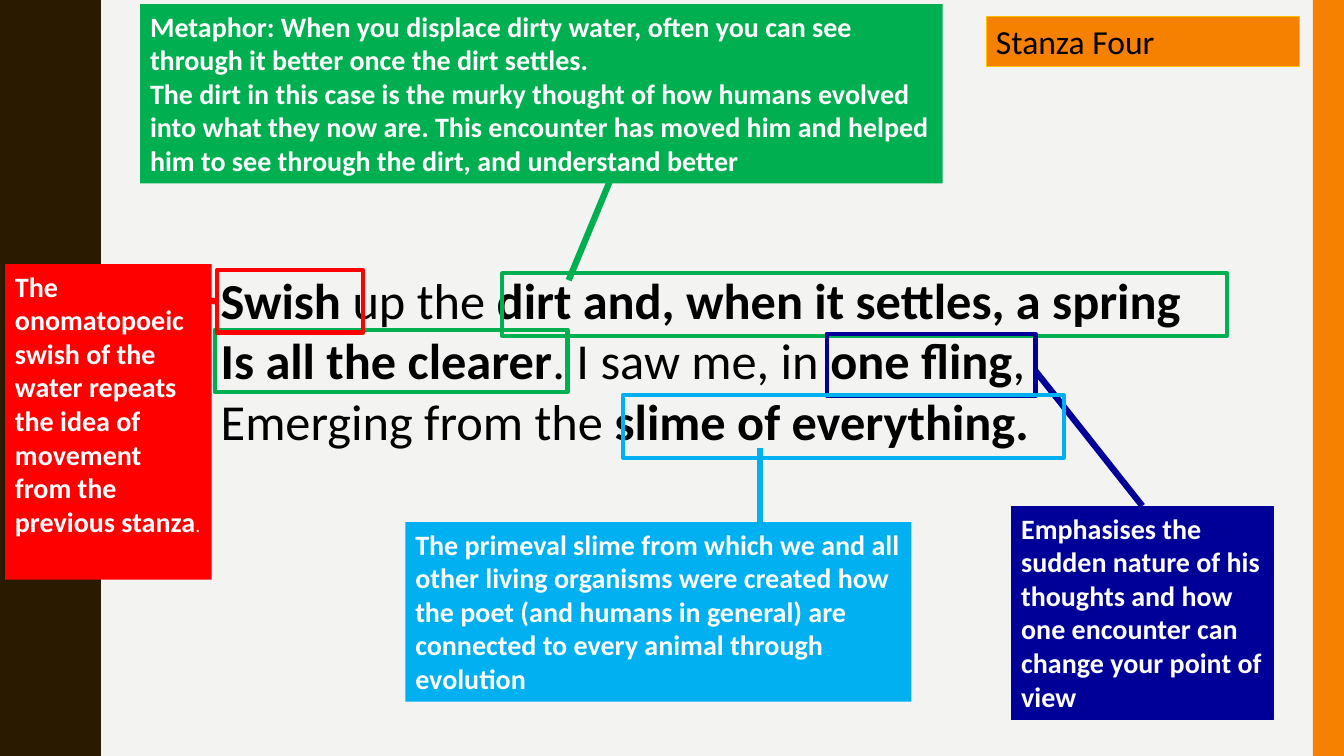
from pptx import Presentation
from pptx.dml.color import RGBColor
from pptx.enum.shapes import MSO_CONNECTOR, MSO_SHAPE
from pptx.enum.text import MSO_ANCHOR, PP_ALIGN
from pptx.oxml.ns import qn
from pptx.util import Inches, Pt
from lxml import etree

RECTANGLE = MSO_SHAPE.RECTANGLE
STRAIGHT = MSO_CONNECTOR.STRAIGHT
TOP_SIDE, LEFT_SIDE = 0, 1

PAPER = RGBColor(0xF3, 0xF3, 0xF2)
BROWN = RGBColor(0x2A, 0x1A, 0x00)
ORANGE = RGBColor(0xF6, 0x81, 0x00)
GOLD = RGBColor(0xFF, 0xC0, 0x00)
RED = RGBColor(0xFF, 0x00, 0x00)
GREEN = RGBColor(0x00, 0xB0, 0x50)
NAVY = RGBColor(0x00, 0x00, 0x99)
CYAN = RGBColor(0x00, 0xB0, 0xF0)
BLACK = RGBColor(0x00, 0x00, 0x00)
WHITE = RGBColor(0xFF, 0xFF, 0xFF)

WIDTH, HEIGHT = 13.33, 7.5
FONT = "Calibri"

# Text is a list of paragraphs; each paragraph is a list of (words, size, bold)
VERSE = [
    [("Swish", 36, True), (" up the ", 36, False),
     ("dirt and, when it settles, a spring", 36, True)],
    [("Is all the clearer", 36, True), (". I saw me, in ", 36, False),
     ("one fling", 36, True), (",", 36, False)],
    [("Emerging from the ", 36, False), ("slime of everything.", 36, True)],
]
VERSE_AREA = (2.09, 2.62, 10.08, 1.92)

# name: (area, fill, border, text colour, paragraphs)
NOTES = {
    "swish": ((0.05, 2.62, 2.05, 3.13), RED, None, WHITE, [
        [("The onomatopoeic swish of the water repeats the idea of movement "
          "from the previous stanza", 20, True), (".", 14, False)]]),
    "metaphor": ((1.39, 0.04, 7.96, 1.78), GREEN, None, WHITE, [
        [("Metaphor: When you displace dirty water, often you can see through "
          "it better once the dirt settles.", 20, True)],
        [("The dirt in this case is the murky thought of how humans evolved "
          "into what they now are. This encounter has moved him and helped "
          "him to see through the dirt, and understand better", 20, True)]]),
    "title": ((9.78, 0.16, 3.11, 0.5), ORANGE, GOLD, BLACK, [
        [("Stanza Four", 24, False)]]),
    "fling": ((10.03, 5.02, 2.6, 2.12), NAVY, NAVY, WHITE, [
        [("Emphasises the sudden nature of his thoughts and how one encounter "
          "can change your point of view", 20, True)]]),
    "slime": ((4.02, 5.18, 5.02, 1.78), CYAN, None, WHITE, [
        [("The primeval slime from which we and all other living organisms "
          "were created how the poet (and humans in general) are connected "
          "to every animal through evolution", 20, True)]]),
}

# name: (start, end, colour)
POINTERS = {
    "swish": ((1.01, 2.87), (2.15, 2.99), RED),
    "metaphor": ((6.06, 1.77), (5.64, 2.78), GREEN),
    "fling": ((10.27, 3.68), (11.33, 5.02), NAVY),
    "slime": ((7.54, 4.44), (7.54, 5.26), CYAN),
}

# Frames around the quoted words: name: (left, top, width, colour)
FRAME_HEIGHT = 0.62
FRAMES = {
    "dirt": (4.98, 2.71, 7.19, GREEN),
    "clearer": (2.13, 3.27, 3.5, GREEN),
    "fling": (8.2, 3.31, 2.07, NAVY),
    "slime": (6.18, 3.92, 4.37, CYAN),
    "swish": (2.15, 2.68, 1.45, RED),
}

# Rising half of one wave; the falling half mirrors it
WAVE_LENGTH = HEIGHT / 5
HALF_WAVE = [(0.78, 0), (0.78, 0.07), (0.79, 0.14), (0.8, 0.2), (0.81, 0.25),
             (0.83, 0.29), (0.85, 0.33), (0.87, 0.38), (0.89, 0.42),
             (0.91, 0.46), (0.93, 0.5), (0.95, 0.55), (0.96, 0.61),
             (0.97, 0.68), (0.97, 0.75)]


def style(shape, fill=None, border=None, weight=0.75):
    shape.shadow.inherit = False
    if fill is None:
        shape.fill.background()
    else:
        shape.fill.solid()
        shape.fill.fore_color.rgb = fill
    if border is None:
        shape.line.fill.background()
    else:
        shape.line.color.rgb = border
        shape.line.width = Pt(weight)


def add_box(page, area, fill=None, border=None, weight=0.75):
    box = page.shapes.add_shape(RECTANGLE, *map(Inches, area))
    style(box, fill, border, weight)
    return box


def write(box, paragraphs, colour):
    frame = box.text_frame
    frame.word_wrap = True
    frame.vertical_anchor = MSO_ANCHOR.TOP
    frame.text = "\n".join("" for _ in paragraphs)
    for para, pieces in zip(frame.paragraphs, paragraphs):
        para.alignment = PP_ALIGN.LEFT
        for words, size, bold in pieces:
            span = para.add_run()
            span.text = words
            span.font.name = FONT
            span.font.size = Pt(size)
            span.font.bold = bold
            span.font.color.rgb = colour


def add_pointer(page, start, end, colour):
    pointer = page.shapes.add_connector(STRAIGHT, *map(Inches, start + end))
    pointer.line.color.rgb = colour
    pointer.line.width = Pt(4.5)
    etree.SubElement(pointer._element.spPr, qn("a:effectLst"))
    return pointer


def add_wave_band(page):
    wave = HALF_WAVE + [(x, WAVE_LENGTH - y) for x, y in HALF_WAVE[-2::-1]]
    edge = [(x, y + turn * WAVE_LENGTH) for turn in range(5) for x, y in wave]
    builder = page.shapes.build_freeform(0, 0, scale=Inches(1))
    builder.add_line_segments(edge + [(0, HEIGHT)], close=True)
    style(builder.convert_to_shape(), BROWN)


def main():
    deck = Presentation()
    deck.slide_width, deck.slide_height = Inches(WIDTH), Inches(HEIGHT)
    page = deck.slides.add_slide(deck.slide_layouts[6])
    page.background.fill.solid()
    page.background.fill.fore_color.rgb = PAPER

    # Side bands
    add_wave_band(page)
    add_box(page, (13.02, 0, WIDTH - 13.02, HEIGHT), ORANGE)

    # Verse
    verse = page.shapes.add_textbox(*map(Inches, VERSE_AREA))
    write(verse, VERSE, BLACK)

    # Notes
    notes = {}
    for name, (area, fill, border, colour, paragraphs) in NOTES.items():
        notes[name] = add_box(page, area, fill, border)
        write(notes[name], paragraphs, colour)

    # Pointers and frames
    pointers = {name: add_pointer(page, *ends) for name, ends in POINTERS.items()}
    frames = {name: add_box(page, (left, top, width, FRAME_HEIGHT), None, colour, 3)
              for name, (left, top, width, colour) in FRAMES.items()}
    pointers["swish"].end_connect(frames["swish"], LEFT_SIDE)
    pointers["fling"].end_connect(notes["fling"], TOP_SIDE)

    deck.save("out.pptx")


if __name__ == "__main__":
    main()
